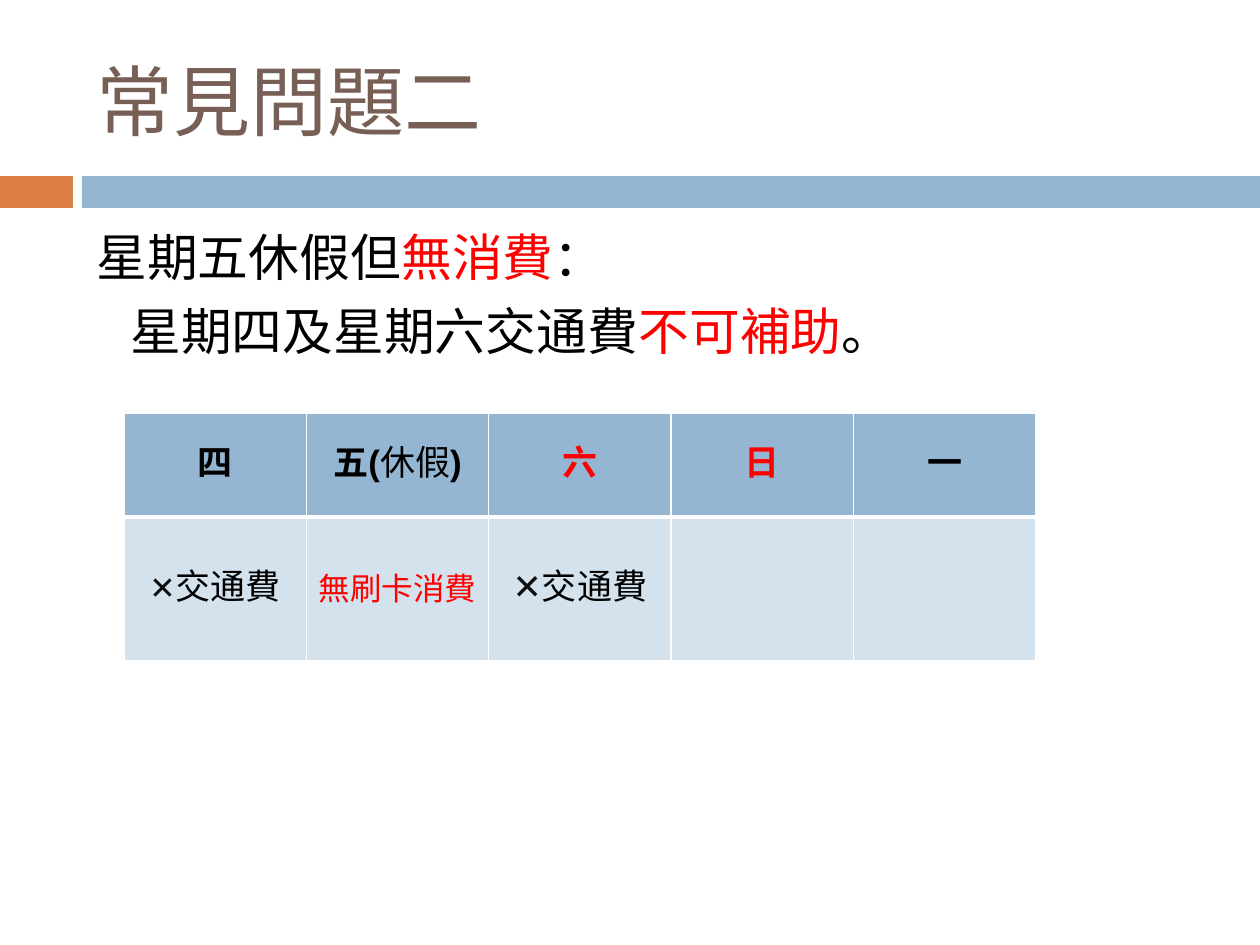
from dataclasses import dataclass

from lxml import etree
from pptx import Presentation
from pptx import util as u
from pptx.dml import color as dml
from pptx.enum import shapes, text
from pptx.oxml import ns

SCALE = u.Inches(10) / 1260
COLORS = {
    "orange": "DD8047",
    "blue": "94B6D2",
    "pale": "D4E2ED",
    "brown": "775F55",
    "black": "000000",
    "ink": "0D0D0D",
    "red": "FF0000",
    "white": "FFFFFF",
}


@dataclass(frozen=True)
class Box:
    left: int
    top: int
    width: int
    height: int

    def emu(self) -> tuple[int, ...]:
        return tuple(px(value) for value in (self.left, self.top, self.width, self.height))


@dataclass(frozen=True)
class Bar:
    box: Box
    color: str


@dataclass(frozen=True)
class Run:
    wording: str
    color: str = "black"
    size: int = 20
    font: str = "Arial"
    bold: bool = False


@dataclass(frozen=True)
class Line:
    runs: tuple[Run, ...]
    space_before: int = 0
    indent: int = 0


def px(value: int) -> int:
    return round(value * SCALE)


def rgb(name: str) -> dml.RGBColor:
    return dml.RGBColor.from_string(COLORS[name])


def apply(target, values: dict) -> None:
    for name, value in values.items():
        setattr(target, name, value)


def add_runs(paragraph, runs: tuple[Run, ...]) -> None:
    for item in runs:
        run = paragraph.add_run()
        run.text = item.wording
        apply(run.font, {"name": item.font, "size": u.Pt(item.size), "bold": item.bold})
        run.font.color.rgb = rgb(item.color)


def draw_bar(slide, bar: Bar) -> None:
    shape = slide.shapes.add_shape(shapes.MSO_SHAPE.RECTANGLE, *bar.box.emu())
    shape.shadow.inherit = False
    shape.fill.solid()
    shape.fill.fore_color.rgb = rgb(bar.color)
    shape.line.fill.background()


def draw_text(slide, box: Box, lines: tuple[Line, ...], anchor) -> None:
    frame = slide.shapes.add_textbox(*box.emu()).text_frame
    apply(frame, {"word_wrap": True, "vertical_anchor": anchor})
    for index, line in enumerate(lines):
        paragraph = frame.add_paragraph() if index else frame.paragraphs[0]
        paragraph.space_before = u.Pt(line.space_before)
        paragraph._p.get_or_add_pPr().set("marL", str(px(line.indent)))
        add_runs(paragraph, line.runs)


def draw_borders(cell, bottom: int) -> None:
    properties = cell._tc.get_or_add_tcPr()
    widths = {"lnL": 1, "lnR": 1, "lnT": 1, "lnB": bottom}
    for index, (tag, width) in enumerate(widths.items()):
        border = etree.Element(ns.qn(f"a:{tag}"), w=str(u.Pt(width)))
        fill = etree.SubElement(border, ns.qn("a:solidFill"))
        etree.SubElement(fill, ns.qn("a:srgbClr"), val=COLORS["white"])
        properties.insert(index, border)


def fill_cell(cell, runs: tuple[Run, ...], color: str, bottom: int) -> None:
    cell.fill.solid()
    cell.fill.fore_color.rgb = rgb(color)
    draw_borders(cell, bottom)
    apply(cell, {
        "vertical_anchor": text.MSO_ANCHOR.MIDDLE,
        "margin_left": px(9),
        "margin_right": px(9),
        "margin_top": 0,
        "margin_bottom": 0,
    })
    paragraph = cell.text_frame.paragraphs[0]
    apply(paragraph, {"alignment": text.PP_ALIGN.CENTER, "line_spacing": u.Pt(24)})
    add_runs(paragraph, runs)


def draw_table(slide, box: Box, heights: tuple[int, ...], rows: tuple) -> None:
    table = slide.shapes.add_table(len(rows), len(rows[0]), *box.emu()).table
    for column in table.columns:
        column.width = px(box.width) // len(rows[0])
    for index, (height, contents) in enumerate(zip(heights, rows)):
        table.rows[index].height = px(height)
        color, bottom = ("pale", 1) if index else ("blue", 3)
        for cell, runs in zip(table.rows[index].cells, contents):
            fill_cell(cell, runs, color, bottom)


def heading(wording: str, color: str = "black") -> Run:
    return Run(wording, color, bold=True)


def statement(wording: str, color: str = "black") -> Run:
    return Run(wording, color, 29, "Calibri")


BARS = (
    Bar(Box(0, 176, 73, 32), "orange"),
    Bar(Box(82, 176, 1178, 32), "blue"),
)
TITLE = (Line((Run("常見問題二", "brown", 44, "Calibri"),)),)
BODY = (
    Line((statement("星期五休假但"), statement("無消費", "red"), statement("：")), 7),
    Line((statement("星期四及星期六交通費"), statement("不可補助", "red"), statement("。")), 7, 34),
)
FARE = Run("交通費")
WEEK = (
    (
        (heading("四"),),
        (heading("五("), Run("休假"), heading(")")),
        (heading("六", "red"),),
        (heading("日", "red"),),
        (heading("一"),),
    ),
    (
        (Run("✕", "ink", 18, "Calibri", True), FARE),
        (Run("無刷卡消費", "red", 18),),
        (Run("✕", "ink", 20, "Calibri", True), FARE),
        (),
        (),
    ),
)


def main() -> None:
    presentation = Presentation()
    apply(presentation, {"slide_width": px(1260), "slide_height": px(945)})
    slide = presentation.slides.add_slide(presentation.slide_layouts[6])
    for bar in BARS:
        draw_bar(slide, bar)
    draw_text(slide, Box(84, 32, 1124, 136), TITLE, text.MSO_ANCHOR.MIDDLE)
    draw_text(slide, Box(84, 220, 1124, 620), BODY, text.MSO_ANCHOR.TOP)
    draw_table(slide, Box(124, 413, 912, 248), (104, 144), WEEK)
    presentation.save("out.pptx")


if __name__ == "__main__":
    main()
